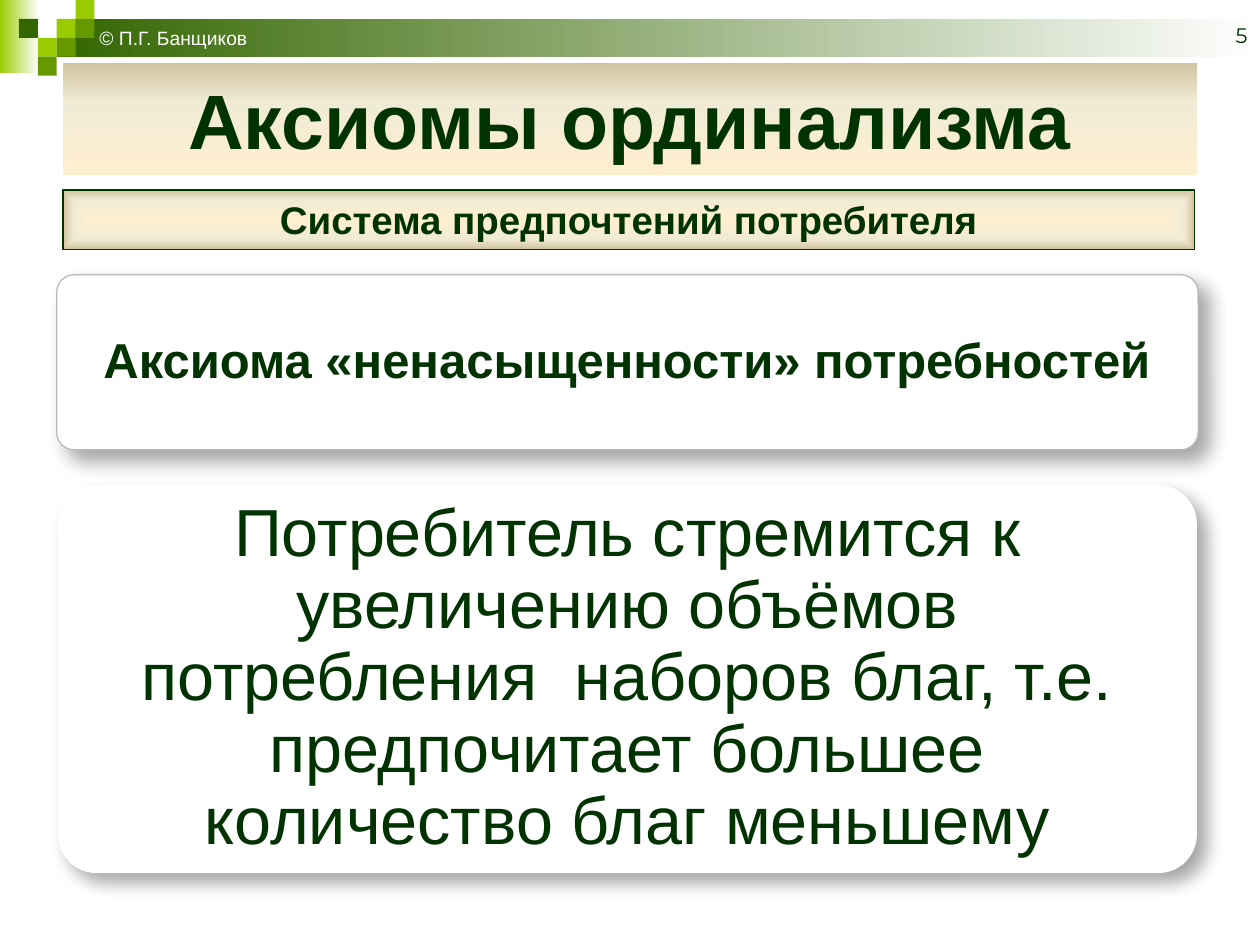
from dataclasses import dataclass

from pptx import Presentation
from pptx.dml.color import RGBColor
from pptx.enum.shapes import MSO_SHAPE
from pptx.enum.text import MSO_ANCHOR, PP_ALIGN
from pptx.oxml import parse_xml
from pptx.oxml.ns import nsdecls, qn
from pptx.util import Inches, Pt

RECTANGLE = MSO_SHAPE.RECTANGLE
ROUNDED = MSO_SHAPE.ROUNDED_RECTANGLE
LEFT, CENTER, RIGHT = PP_ALIGN.LEFT, PP_ALIGN.CENTER, PP_ALIGN.RIGHT
TOP, MIDDLE, BOTTOM = MSO_ANCHOR.TOP, MSO_ANCHOR.MIDDLE, MSO_ANCHOR.BOTTOM


@dataclass(frozen=True)
class Theme:
    white: str = "FFFFFF"
    ink: str = "003300"
    dark: str = "336600"
    medium: str = "669900"
    light: str = "99CC00"
    card_line: str = "B9B9B9"
    parchment: tuple = ((0, "FFEFD1"), (65, "F0EBD5"), (100, "D1C39F"))
    font: str = "Arial"
    number_font: str = "Montserrat"
    title: int = 44
    body: int = 38
    axiom: int = 28
    subtitle: int = 22
    number: int = 12
    author: int = 11


THEME = Theme()
SLIDE_SIZE = (10, 7.5)
TILE = 0.15
# Column, row and colour of each header tile
TILES = (
    (3, 1, THEME.light), (4, 0, THEME.light), (4, 1, THEME.medium),
    (2, 2, THEME.light), (1, 1, THEME.dark), (3, 2, THEME.medium),
    (2, 3, THEME.medium),
)
RIGHTWARD = '<a:lin ang="0" scaled="1"/>'
UPWARD = '<a:lin ang="16200000" scaled="1"/>'
FROM_CENTER = ('<a:path path="rect"><a:fillToRect l="50000" t="50000" '
               'r="50000" b="50000"/></a:path>')


def set_attributes(target, values):
    for name, value in values.items():
        setattr(target, name, value)


def add_box(page, area, color=None, line=None, line_width=1, kind=RECTANGLE):
    box = page.shapes.add_shape(kind, *map(Inches, area))
    box.shadow.inherit = False
    if color:
        box.fill.solid()
        box.fill.fore_color.rgb = RGBColor.from_string(color)
    if line:
        box.line.color.rgb = RGBColor.from_string(line)
        box.line.width = Pt(line_width)
    else:
        box.line.fill.background()
    return box


def add_gradient_box(page, area, stops, direction, line=None):
    box = add_box(page, area, line=line)
    box.fill.gradient()
    stop_xml = "".join(
        f'<a:gs pos="{position * 1000}"><a:srgbClr val="{color}"/></a:gs>'
        for position, color in stops)
    gradient = parse_xml(f'<a:gradFill {nsdecls("a")} rotWithShape="1">'
                         f'<a:gsLst>{stop_xml}</a:gsLst>{direction}</a:gradFill>')
    properties = box.element.spPr
    properties.replace(properties.find(qn("a:gradFill")), gradient)
    return box


def add_card(page, area, line=None):
    box = add_box(page, area, THEME.white, line, 0.75, ROUNDED)
    box.adjustments[0] = 0.1
    # Soft shadow falling to the lower right
    box.element.spPr.find(qn("a:effectLst")).append(parse_xml(
        f'<a:outerShdw {nsdecls("a")} blurRad="{Pt(10.2)}" dist="{Pt(8)}" '
        'dir="2700000" algn="tl" rotWithShape="0"><a:srgbClr val="000000">'
        '<a:alpha val="35000"/></a:srgbClr></a:outerShdw>'))
    return box


def write_text(box, text, size, bold=False, color=THEME.ink, font=THEME.font,
               align=CENTER, anchor=MIDDLE, inset=(0.1, 0.05), spacing=1.0):
    across, down = map(Inches, inset)
    frame = box.text_frame
    set_attributes(frame, {
        "word_wrap": True, "vertical_anchor": anchor,
        "margin_left": across, "margin_right": across,
        "margin_top": down, "margin_bottom": down,
    })
    para = frame.paragraphs[0]
    set_attributes(para, {"alignment": align, "line_spacing": spacing})
    span = para.add_run()
    span.text = text
    set_attributes(span.font, {"name": font, "size": Pt(size), "bold": bold})
    span.font.color.rgb = RGBColor.from_string(color)


def add_text(page, area, text, size, **options):
    box = page.shapes.add_textbox(*map(Inches, area))
    write_text(box, text, size, **options)


def add_header(page):
    for area, color in (((0, 0, 0.31, 0.58), THEME.light),
                        ((0.45, 0.15, 9.55, 0.3), THEME.dark)):
        add_gradient_box(page, area, ((0, color), (100, THEME.white)), RIGHTWARD)
    for column, row, color in TILES:
        add_box(page, (column * TILE, row * TILE, TILE, TILE), color)
    add_text(page, (9.38, 0.16, 0.62, 0.27), "5", THEME.number,
             font=THEME.number_font, align=RIGHT, anchor=BOTTOM)
    add_text(page, (0.69, 0.16, 1.48, 0.29), "© П.Г. Банщиков", THEME.author,
             color=THEME.white, align=LEFT, anchor=TOP)


def main():
    deck = Presentation()
    deck.slide_width, deck.slide_height = map(Inches, SLIDE_SIZE)
    page = deck.slides.add_slide(deck.slide_layouts[6])

    add_header(page)

    # Axiom and its explanation
    add_card(page, (0.45, 2.18, 9.06, 1.39), THEME.card_line)
    add_text(page, (0.49, 2.22, 8.97, 1.31),
             "Аксиома «ненасыщенности» потребностей", THEME.axiom,
             bold=True, inset=(0.12, 0.12), spacing=0.9)
    add_card(page, (0.46, 3.85, 9.04, 3.08))
    add_text(page, (0.55, 3.94, 8.86, 2.9),
             "Потребитель стремится к увеличению объёмов потребления  наборов "
             "благ, т.е. предпочитает большее количество благ меньшему",
             THEME.body, inset=(0.16, 0.16), spacing=0.9)

    # Title and subtitle bands
    title = add_gradient_box(page, (0.5, 0.5, 9, 0.89), THEME.parchment, UPWARD)
    write_text(title, "Аксиомы ординализма", THEME.title, bold=True)
    subtitle = add_gradient_box(page, (0.5, 1.51, 8.98, 0.47), THEME.parchment,
                                FROM_CENTER, THEME.ink)
    write_text(subtitle, "Система предпочтений потребителя", THEME.subtitle,
               bold=True, anchor=TOP)

    deck.save("out.pptx")


if __name__ == "__main__":
    main()
